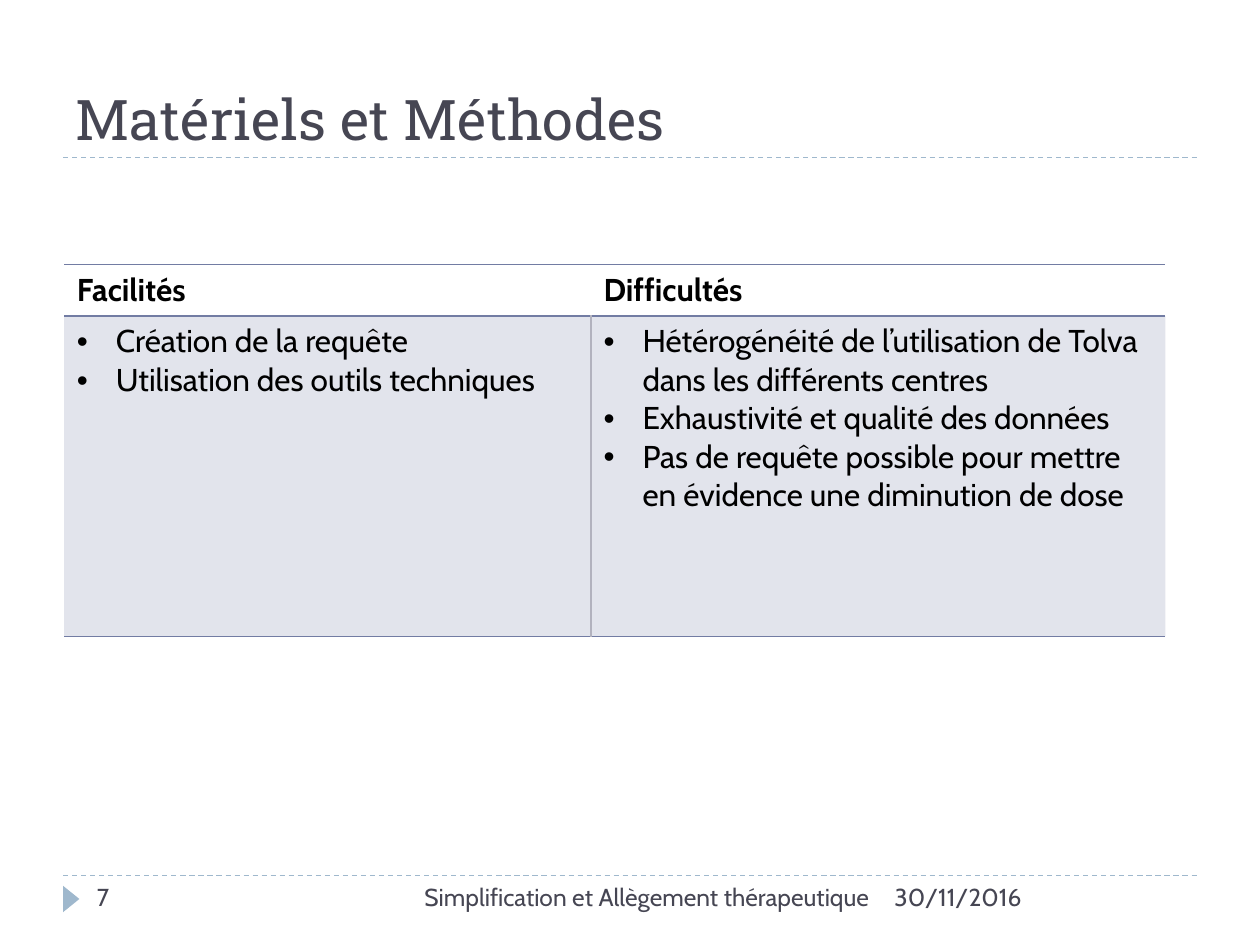
from pptx import Presentation, util as u
from pptx.dml.color import RGBColor
from pptx.enum import dml, shapes, text
from pptx.oxml import parse_xml
from pptx.oxml.ns import nsdecls, qn

TITLE = "Matériels et Méthodes"
COLUMNS = [
    ("Facilités", ["Création de la requête", "Utilisation des outils techniques"]),
    ("Difficultés", [
        "Hétérogénéité de l’utilisation de Tolva dans les différents centres",
        "Exhaustivité et qualité des données",
        "Pas de requête possible pour mettre en évidence une diminution de dose",
    ]),
]
FOOTER = [
    ("30/11/2016", 0.70, 0.25, text.PP_ALIGN.LEFT),
    ("Simplification et Allègement thérapeutique", 0.317, 0.383, text.PP_ALIGN.RIGHT),
    ("7", 0.067, 0.217, text.PP_ALIGN.LEFT),
]

THEME = {
    "heading_font": "Roboto Slab", "body_font": "Cabin",
    "title_size": 32, "table_size": 18, "footer_size": 14,
    "ink": "464653", "black": "000000",
    "accent": "727CA3", "rule": "9FB8CD", "divider": "B2B2BE",
}
WIDTH, HEIGHT = 10, 7.5
MARGIN = 0.05 * WIDTH
TITLE_BOTTOM, FOOTER_TOP = 1.25, 6.95
TABLE_LEFT, TABLE_TOP = 0.51, 2.1
COLUMN_WIDTHS, ROW_HEIGHTS = (4.18, 4.56), (0.41, 2.54)
INDENT = 0.31


def color(name):
    return RGBColor.from_string(THEME[name])


def add_run(paragraph, words, size, ink, font="body_font", bold=False):
    run = paragraph.add_run()
    run.text = words
    run.font.name = THEME[font]
    run.font.size = u.Pt(THEME[size])
    run.font.color.rgb = color(ink)
    run.font.bold = bold


def add_label(slide, box, words, size, font="body_font",
              align=text.PP_ALIGN.LEFT, anchor=text.MSO_ANCHOR.TOP):
    frame = slide.shapes.add_textbox(*map(u.Inches, box)).text_frame
    frame.word_wrap = True
    frame.vertical_anchor = anchor
    frame.paragraphs[0].alignment = align
    add_run(frame.paragraphs[0], words, size, "ink", font)


def add_rule(slide, top):
    rule = slide.shapes.add_connector(
        shapes.MSO_CONNECTOR.STRAIGHT,
        *map(u.Inches, (MARGIN, top, WIDTH - MARGIN, top)))
    rule.line.color.rgb = color("rule")
    rule.line.width = u.Pt(0.75)
    rule.line.dash_style = dml.MSO_LINE.DASH
    rule._element.spPr.append(parse_xml(f"<a:effectLst {nsdecls('a')}/>"))


def add_marker(slide):
    marker = slide.shapes.add_shape(
        shapes.MSO_SHAPE.ISOSCELES_TRIANGLE,
        *map(u.Inches, (0.46, 7.07, 0.21, 0.13)))
    marker.rotation = 90
    marker.shadow.inherit = False
    marker.fill.solid()
    marker.fill.fore_color.rgb = color("rule")
    marker.line.fill.background()


def set_borders(cell, **borders):
    properties = cell._tc.get_or_add_tcPr()
    for position, side in enumerate("LRTB"):
        name = borders.get(side)
        fill = (f'<a:solidFill><a:srgbClr val="{THEME[name]}"/></a:solidFill>'
                if name else "<a:noFill/>")
        properties.insert(position, parse_xml(
            f'<a:ln{side} {nsdecls("a")} w="12700">{fill}</a:ln{side}>'))


def tint(cell):
    cell.fill.solid()
    cell.fill.fore_color.rgb = color("accent")
    swatch = cell._tc.tcPr.find(".//" + qn("a:srgbClr"))
    swatch.append(parse_xml(f'<a:alpha {nsdecls("a")} val="20000"/>'))


def add_bullet(paragraph):
    properties = paragraph._p.get_or_add_pPr()
    properties.set("marL", str(u.Inches(INDENT)))
    properties.set("indent", str(-u.Inches(INDENT)))
    properties.append(parse_xml(f'<a:buFont {nsdecls("a")} typeface="Arial"/>'))
    properties.append(parse_xml(f'<a:buChar {nsdecls("a")} char="•"/>'))


def add_comparison(slide):
    box = (TABLE_LEFT, TABLE_TOP, sum(COLUMN_WIDTHS), sum(ROW_HEIGHTS))
    table = slide.shapes.add_table(
        len(ROW_HEIGHTS), len(COLUMNS), *map(u.Inches, box)).table
    table.first_row = table.horz_banding = False
    for row, height in zip(table.rows, ROW_HEIGHTS):
        row.height = u.Inches(height)
    for index, (heading, points) in enumerate(COLUMNS):
        table.columns[index].width = u.Inches(COLUMN_WIDTHS[index])
        header, body = table.cell(0, index), table.cell(1, index)
        header.fill.background()
        set_borders(header, T="accent", B="accent")
        add_run(header.text_frame.paragraphs[0], heading, "table_size", "black", bold=True)
        tint(body)
        inner_side = "R" if index == 0 else "L"
        set_borders(body, T="accent", B="accent", **{inner_side: "divider"})
        frame = body.text_frame
        for number, point in enumerate(points):
            paragraph = frame.add_paragraph() if number else frame.paragraphs[0]
            add_bullet(paragraph)
            add_run(paragraph, point, "table_size", "black")


def main():
    presentation = Presentation()
    presentation.slide_width = u.Inches(WIDTH)
    presentation.slide_height = u.Inches(HEIGHT)
    slide = presentation.slides.add_slide(presentation.slide_layouts[6])
    for top in (FOOTER_TOP, TITLE_BOTTOM):
        add_rule(slide, top)
    add_marker(slide)
    add_label(slide, (MARGIN, 0.17, WIDTH - 2 * MARGIN, TITLE_BOTTOM - 0.17), TITLE,
              "title_size", "heading_font", anchor=text.MSO_ANCHOR.BOTTOM)
    add_comparison(slide)
    for words, left, width, align in FOOTER:
        add_label(slide, (left * WIDTH, FOOTER_TOP, width * WIDTH, 0.4), words,
                  "footer_size", align=align)
    presentation.save("out.pptx")


if __name__ == "__main__":
    main()
